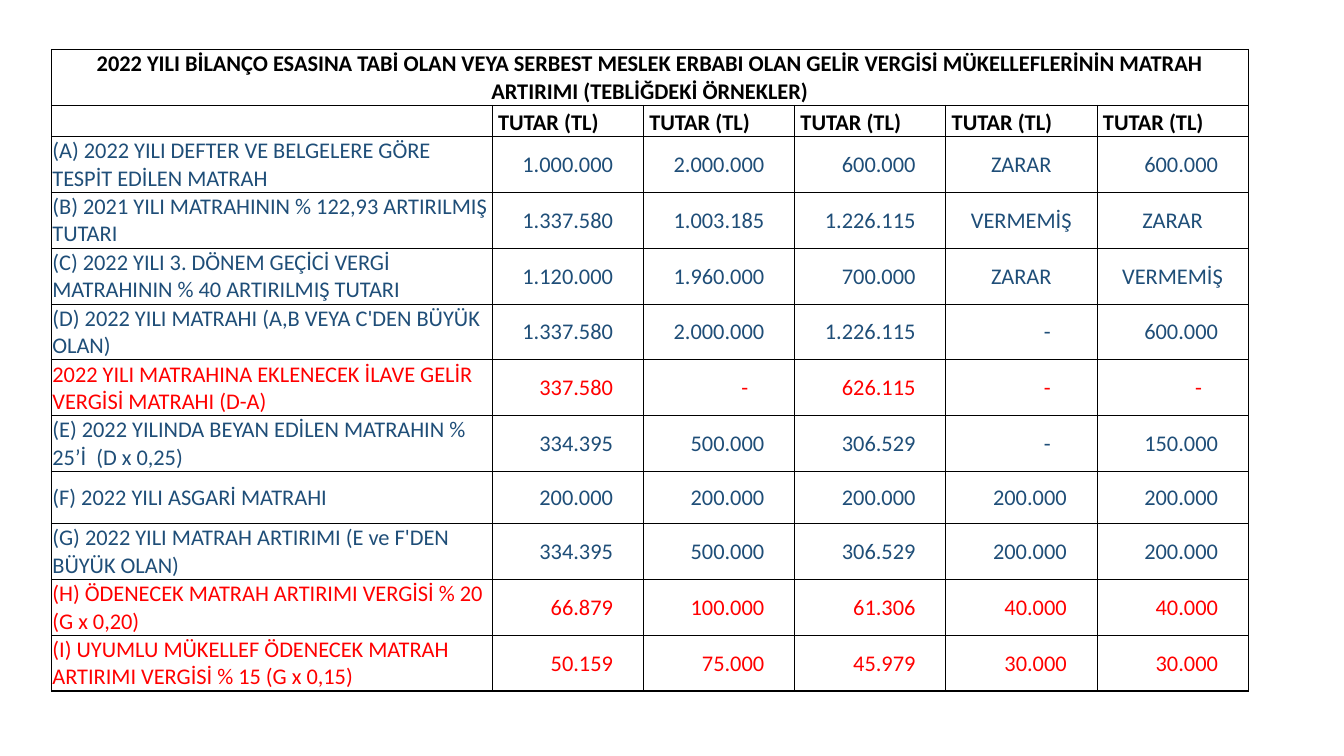
from lxml import etree
from pptx import Presentation
from pptx.dml.color import RGBColor
from pptx.enum.text import MSO_ANCHOR, PP_ALIGN
from pptx.oxml.ns import qn
from pptx.util import Inches, Pt

LEFT, CENTER, RIGHT = PP_ALIGN.LEFT, PP_ALIGN.CENTER, PP_ALIGN.RIGHT
MIDDLE, BOTTOM = MSO_ANCHOR.MIDDLE, MSO_ANCHOR.BOTTOM
BLACK, WHITE, BLUE, RED = "000000", "FFFFFF", "1F4E78", "FF0000"
BLANK_LAYOUT = 6

TITLE = ("2022 YILI BİLANÇO ESASINA TABİ OLAN VEYA SERBEST MESLEK ERBABI OLAN "
         "GELİR VERGİSİ MÜKELLEFLERİNİN MATRAH ARTIRIMI (TEBLİĞDEKİ ÖRNEKLER)")
HEADER = [""] + ["TUTAR (TL)"] * 5
ROWS = [
    (BLUE, "(A) 2022 YILI DEFTER VE BELGELERE GÖRE TESPİT EDİLEN MATRAH",
     "1.000.000", "2.000.000", "600.000", "ZARAR", "600.000"),
    (BLUE, "(B) 2021 YILI MATRAHININ % 122,93 ARTIRILMIŞ TUTARI",
     "1.337.580", "1.003.185", "1.226.115", "VERMEMİŞ", "ZARAR"),
    (BLUE, "(C) 2022 YILI 3. DÖNEM GEÇİCİ VERGİ MATRAHININ % 40 ARTIRILMIŞ TUTARI",
     "1.120.000", "1.960.000", "700.000", "ZARAR", "VERMEMİŞ"),
    (BLUE, "(D) 2022 YILI MATRAHI (A,B VEYA C'DEN BÜYÜK OLAN)",
     "1.337.580", "2.000.000", "1.226.115", "-", "600.000"),
    (RED, "2022 YILI MATRAHINA EKLENECEK İLAVE GELİR VERGİSİ MATRAHI (D-A)",
     "337.580", "-", "626.115", "-", "-"),
    (BLUE, "(E) 2022 YILINDA BEYAN EDİLEN MATRAHIN % 25’İ  (D x 0,25)",
     "334.395", "500.000", "306.529", "-", "150.000"),
    (BLUE, "(F) 2022 YILI ASGARİ MATRAHI",
     "200.000", "200.000", "200.000", "200.000", "200.000"),
    (BLUE, "(G) 2022 YILI MATRAH ARTIRIMI (E ve F'DEN BÜYÜK OLAN)",
     "334.395", "500.000", "306.529", "200.000", "200.000"),
    (RED, "(H) ÖDENECEK MATRAH ARTIRIMI VERGİSİ % 20 (G x 0,20)",
     "66.879", "100.000", "61.306", "40.000", "40.000"),
    (RED, "(I) UYUMLU MÜKELLEF ÖDENECEK MATRAH ARTIRIMI VERGİSİ % 15 (G x 0,15)",
     "50.159", "75.000", "45.979", "30.000", "30.000"),
]


def rgb(color):
    return RGBColor.from_string(color)


def amount_format(value):
    """Words are centred; amounts and dashes line up on the right."""
    if value.isalpha():
        return {"align": CENTER}
    return {"align": RIGHT, "right": 0.46 if value == "-" else 0.3}


class TableSlide:
    font, size = "Calibri", 16
    margin = 0.01
    inner_line, outer_line = 0.5, 1

    def __init__(self, prs):
        self.slide = prs.slides.add_slide(prs.slide_layouts[BLANK_LAYOUT])

    def table(self, left, top, height, col_widths, row_heights):
        frame = self.slide.shapes.add_table(
            len(row_heights), len(col_widths), Inches(left), Inches(top),
            Inches(sum(col_widths)), Inches(height))
        tbl = frame.table
        for column, width in zip(tbl.columns, col_widths):
            column.width = Inches(width)
        for row, row_height in zip(tbl.rows, row_heights):
            row.height = Inches(row_height)
        frame.height = Inches(height)
        last_row, last_col = len(row_heights) - 1, len(col_widths) - 1
        for r in range(last_row + 1):
            for c in range(last_col + 1):
                cell = tbl.cell(r, c)
                self.borders(cell, lnL=c == 0, lnR=c == last_col,
                             lnT=r == 0, lnB=r == last_row)
                cell.fill.solid()
                cell.fill.fore_color.rgb = rgb(WHITE)
        return tbl

    def borders(self, cell, **outer_sides):
        """Draw all four sides, thicker where the side is on the outer edge."""
        tcPr = cell._tc.get_or_add_tcPr()
        for side, outer in outer_sides.items():
            width = Pt(self.outer_line if outer else self.inner_line)
            ln = etree.SubElement(tcPr, qn("a:" + side), w=str(width))
            fill = etree.SubElement(ln, qn("a:solidFill"))
            etree.SubElement(fill, qn("a:srgbClr"), val=BLACK)

    def text(self, cell, text, color=BLACK, bold=False, align=LEFT,
             anchor=MIDDLE, left=margin, right=margin):
        cell.margin_left, cell.margin_right = Inches(left), Inches(right)
        cell.margin_top, cell.margin_bottom = Inches(self.margin), 0
        cell.vertical_anchor = anchor
        p = cell.text_frame.paragraphs[0]
        p.alignment = align
        if not text:
            etree.SubElement(p._p, qn("a:endParaRPr"), sz=str(self.size * 100))
            return
        r = p.add_run()
        r.text = text
        r.font.name, r.font.size, r.font.bold = self.font, Pt(self.size), bold
        r.font.color.rgb = rgb(color)


def main():
    prs = Presentation()
    prs.slide_width, prs.slide_height = Inches(13.33), Inches(7.5)
    s = TableSlide(prs)
    tbl = s.table(0.51, 0.49, 6.27, [4.37] + [1.5] * 5,
                  [0.52, 0.31] + [0.52] * len(ROWS))

    tbl.cell(0, 0).merge(tbl.cell(0, len(HEADER) - 1))
    s.text(tbl.cell(0, 0), TITLE, bold=True, align=CENTER, anchor=BOTTOM)
    for c, heading in enumerate(HEADER):
        s.text(tbl.cell(1, c), heading, bold=True, anchor=BOTTOM, left=0.06)
    for r, (color, label, *amounts) in enumerate(ROWS, start=2):
        s.text(tbl.cell(r, 0), label, color=color)
        for c, amount in enumerate(amounts, start=1):
            s.text(tbl.cell(r, c), amount, color=color, **amount_format(amount))

    prs.save("out.pptx")


if __name__ == "__main__":
    main()
